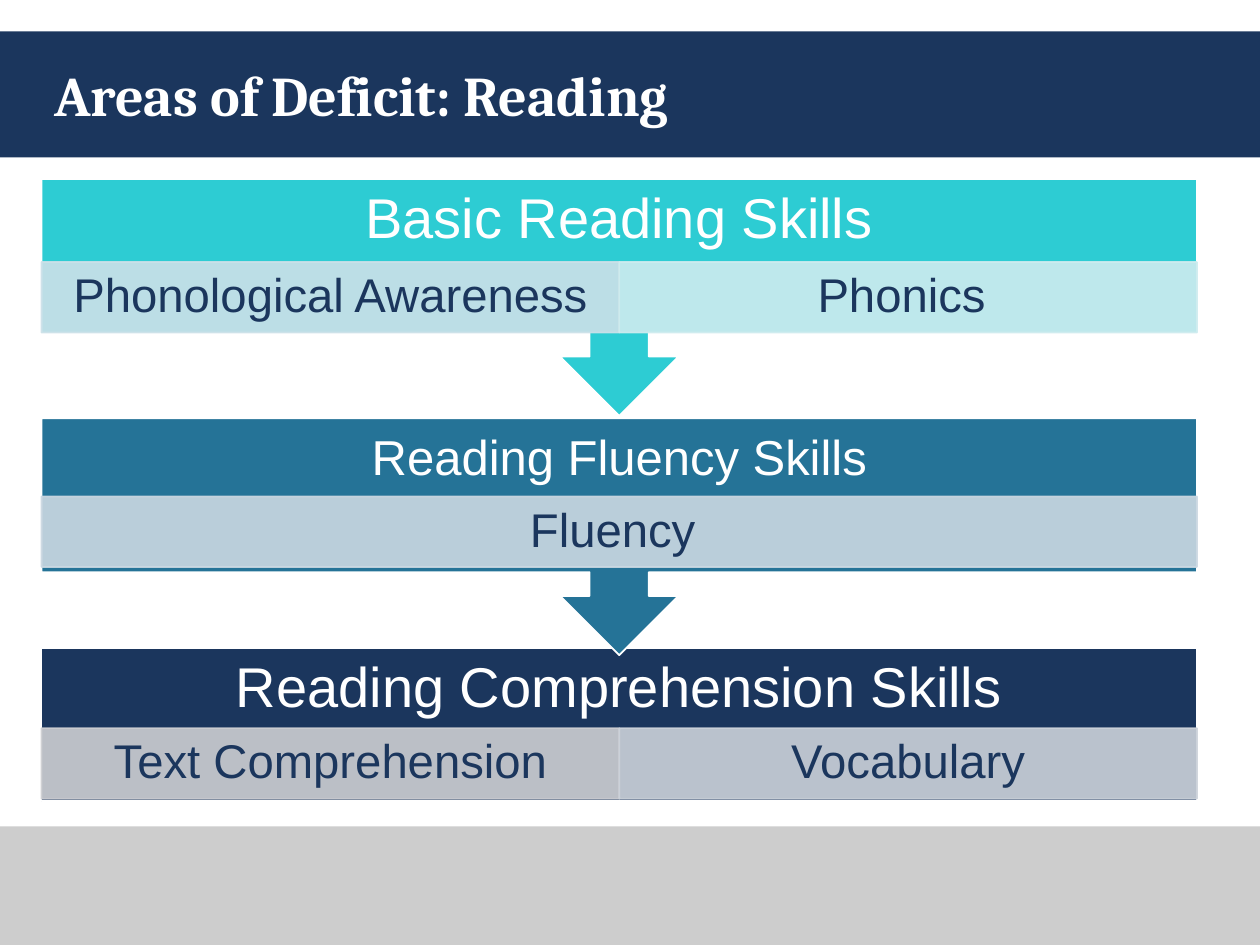
from pptx import Presentation
from pptx.dml.color import RGBColor
from pptx.enum.shapes import MSO_SHAPE
from pptx.enum.text import MSO_ANCHOR, MSO_AUTO_SIZE, PP_ALIGN
from pptx.oxml.ns import qn
from pptx.util import Inches, Pt
from lxml.etree import SubElement

COLORS = {
    "navy": "1B365D", "blue": "257397", "teal": "2DCCD3",
    "white": "FFFFFF", "gray": "CDCDCD",
    "text_comprehension": "CDCED2", "vocabulary": "CCD2DA",
    "fluency": "CBD8E2", "awareness": "CCE1E9", "phonics": "CEECEF",
}
LEFT, WIDTH = 0.33, 9.17
HEADING_HEIGHT, SKILL_HEIGHT = 0.66, 0.56
PLAIN_HEIGHT, ARROW_HEIGHT = 1.22, 1.88

# Stages from back to front:
# top, skill row top, fill, leads on, heading, heading size, skills
STAGES = [
    (5.14, 5.78, "navy", False, "Reading Comprehension Skills", 32,
     [("Text Comprehension", "text_comprehension"), ("Vocabulary", "vocabulary")]),
    (3.32, 3.94, "blue", True, "Reading Fluency Skills", 28,
     [("Fluency ", "fluency")]),
    (1.42, 2.08, "teal", True, "Basic Reading Skills", 32,
     [("Phonological Awareness", "awareness"), ("Phonics ", "phonics")]),
]


def rgb(name):
    return RGBColor.from_string(COLORS[name])


def write_text(frame, text, size, color, font="Arial", bold=False,
               align=PP_ALIGN.CENTER, line_spacing=0.9, margin=0.0):
    frame.word_wrap = True
    frame.auto_size = MSO_AUTO_SIZE.NONE
    frame.vertical_anchor = MSO_ANCHOR.MIDDLE
    frame.margin_left = frame.margin_right = Inches(margin)
    frame.margin_top = frame.margin_bottom = Inches(0.04)
    paragraph = frame.paragraphs[0]
    paragraph.alignment = align
    paragraph.line_spacing = line_spacing
    run = paragraph.add_run()
    run.text = text
    run.font.name, run.font.size, run.font.bold = font, Pt(size), bold
    run.font.color.rgb = rgb(color)


def add_block(slide, kind, box, fill, line=None, opacity=100):
    block = slide.shapes.add_shape(kind, *map(Inches, box))
    block.shadow.inherit = False
    block.fill.solid()
    block.fill.fore_color.rgb = rgb(fill)
    if line:
        block.line.color.rgb = rgb(line)
        block.line.width = Pt(1)
    else:
        block.line.fill.background()
    if opacity < 100:
        for color in block._element.spPr.iter(qn("a:srgbClr")):
            SubElement(color, qn("a:alpha"), val=str(opacity * 1000))
    return block


def add_stage(slide, top, skill_top, fill, leads_on, heading, size, skills):
    # Panel, with an arrow down to the next stage
    kind, height = ((MSO_SHAPE.DOWN_ARROW_CALLOUT, ARROW_HEIGHT) if leads_on
                    else (MSO_SHAPE.RECTANGLE, PLAIN_HEIGHT))
    add_block(slide, kind, (LEFT, top, WIDTH, height), fill, line="white")

    # Heading
    heading_box = slide.shapes.add_textbox(
        *map(Inches, (LEFT, top, WIDTH, HEADING_HEIGHT)))
    write_text(heading_box.text_frame, heading, size, "white", margin=0.25)

    # Skills share the width equally
    skill_width = WIDTH / len(skills)
    for column, (skill, color) in enumerate(skills):
        box = (LEFT + column * skill_width, skill_top, skill_width, SKILL_HEIGHT)
        cell = add_block(slide, MSO_SHAPE.RECTANGLE, box, color,
                         line=color, opacity=90)
        write_text(cell.text_frame, skill, 27, "navy", margin=0.21)


def add_title(slide, text):
    title = slide.shapes.title
    title.left, title.top, title.width, title.height = map(
        Inches, (LEFT, 0.25, 9.08, 1))
    write_text(title.text_frame, text, 32, "white", font="Cambria", bold=True,
               align=PP_ALIGN.LEFT, line_spacing=1.0, margin=0.1)
    # Bring the title in front of its band
    slide.shapes._spTree.append(title._element)


def main():
    presentation = Presentation()
    presentation.slide_width = Inches(10)
    presentation.slide_height = Inches(7.5)
    slide = presentation.slides.add_slide(presentation.slide_layouts[5])

    # Header and footer bands
    add_block(slide, MSO_SHAPE.RECTANGLE, (0, 0.25, 10, 1), "navy")
    add_block(slide, MSO_SHAPE.RECTANGLE, (0, 6.56, 10, 0.94), "gray")

    for stage in STAGES:
        add_stage(slide, *stage)
    add_title(slide, "Areas of Deficit: Reading")
    presentation.save("out.pptx")


if __name__ == "__main__":
    main()
